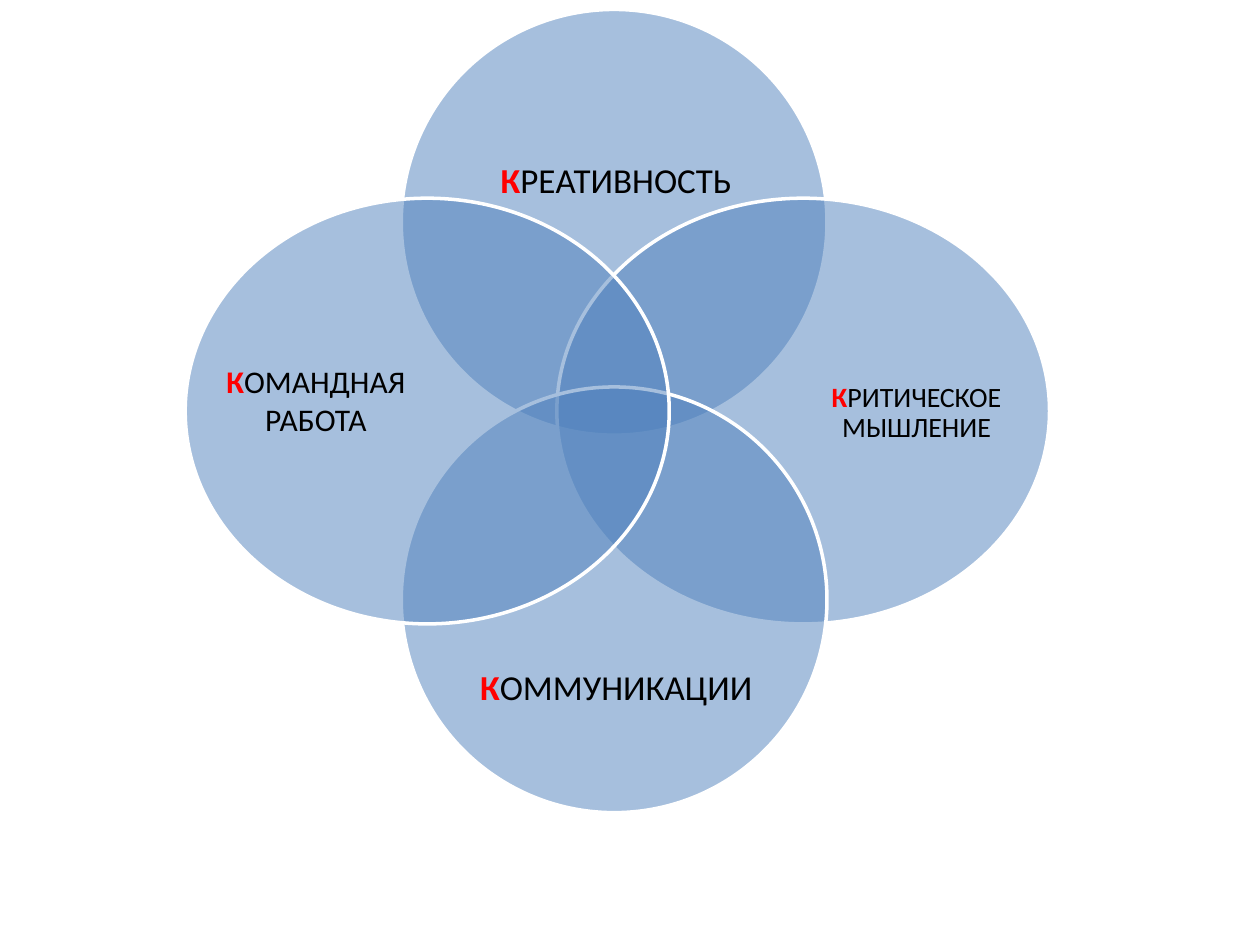
from collections import namedtuple

from lxml.etree import SubElement
from pptx import Presentation
from pptx.dml.color import RGBColor
from pptx.enum.shapes import MSO_SHAPE
from pptx.enum.text import MSO_ANCHOR, PP_ALIGN
from pptx.oxml.ns import qn
from pptx.util import Inches, Pt

COLORS = {"petal": "4F81BD", "outline": "FFFFFF", "initial": "FF0000", "text": "000000"}
FONT = "Calibri"
Box = namedtuple("Box", "left top width height")


def color(name):
    return RGBColor.from_string(COLORS[name])


def inside(box, left, top, width, height):
    return Box(
        int(box.left + left * box.width),
        int(box.top + top * box.height),
        int(width * box.width),
        int(height * box.height),
    )


def add_petal(page, box, opacity=50):
    petal = page.shapes.add_shape(MSO_SHAPE.OVAL, *box)
    petal.shadow.inherit = False
    petal.fill.solid()
    petal.fill.fore_color.rgb = color("petal")
    tint = petal.fill._xPr.find(qn("a:solidFill"))[0]
    SubElement(tint, qn("a:alpha"), val=str(opacity * 1000))
    petal.line.color.rgb = color("outline")
    petal.line.width = Pt(2)


def add_label(page, box, text, size=20, spacing=0.9, anchor=MSO_ANCHOR.MIDDLE, lift=0):
    frame = page.shapes.add_textbox(*box).text_frame
    frame.word_wrap = True
    frame.vertical_anchor = anchor
    frame.margin_left = frame.margin_right = frame.margin_top = 0
    frame.margin_bottom = int(lift * box.height)
    para = frame.paragraphs[0]
    para.alignment = PP_ALIGN.CENTER
    para.line_spacing = spacing
    for part, tone, bold in ((text[0], "initial", True), (text[1:], "text", False)):
        span = para.add_run()
        span.text = part
        span.font.name = FONT
        span.font.size = Pt(size)
        span.font.bold = bold
        span.font.color.rgb = color(tone)


def add_venn(page, box):
    diameter = 0.53
    round_width = diameter * box.height / box.width
    middle = (1 - diameter) / 2
    petals = [
        ((0.25, 0, round_width), (0.12, 0.13, 0.77, 0.32), "КРЕАТИВНОСТЬ",
         {"anchor": MSO_ANCHOR.BOTTOM}),
        ((0.43, middle, 0.57), (0.54, 0.12, 0.38, 0.77), "КРИТИЧЕСКОЕ МЫШЛЕНИЕ",
         {"size": 16}),
        ((0.25, 1 - diameter, round_width), (0.12, 0.55, 0.77, 0.32), "КОММУНИКАЦИИ", {}),
        ((0, middle, 0.56), (0.08, 0.12, 0.38, 0.77), "КОМАНДНАЯ РАБОТА",
         {"size": 18, "spacing": 1.0, "lift": 0.08}),
    ]
    for place, label_place, text, style in petals:
        petal_box = inside(box, *place, diameter)
        add_petal(page, petal_box)
        add_label(page, inside(petal_box, *label_place), text, **style)


def main():
    deck = Presentation()
    deck.slide_width, deck.slide_height = Inches(10), Inches(7.5)
    page = deck.slides.add_slide(deck.slide_layouts[6])
    whole = Box(0, 0, deck.slide_width, deck.slide_height)
    add_venn(page, inside(whole, 14.7 / 100, 0.01, 68.6 / 100, 0.85))
    deck.save("out.pptx")


if __name__ == "__main__":
    main()
